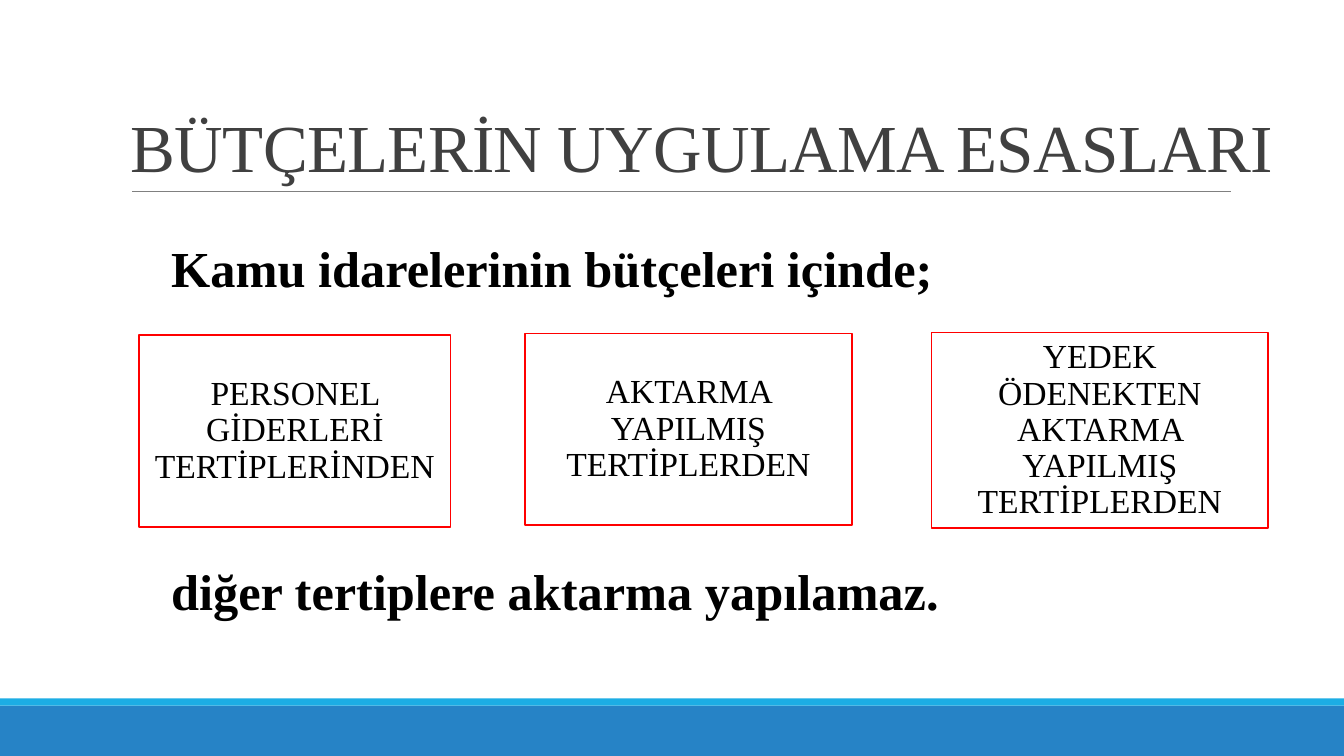
"""Builds the slide on the principles of applying public budgets."""
from dataclasses import dataclass

from lxml import etree
from pptx import Presentation
from pptx.dml.color import RGBColor
from pptx.enum.shapes import MSO_CONNECTOR, MSO_SHAPE
from pptx.enum.text import MSO_ANCHOR, PP_ALIGN
from pptx.oxml.ns import qn
from pptx.util import Inches, Pt

RECTANGLE = MSO_SHAPE.RECTANGLE
STRAIGHT = MSO_CONNECTOR.STRAIGHT
TOP, MIDDLE, BOTTOM = MSO_ANCHOR.TOP, MSO_ANCHOR.MIDDLE, MSO_ANCHOR.BOTTOM
LEFT, CENTER = PP_ALIGN.LEFT, PP_ALIGN.CENTER

COLUMNS, ROWS = 133.33, 75
CELL = Inches(0.1)
FONT = "Times New Roman"


@dataclass(frozen=True)
class Area:
    left: float
    top: float
    width: float
    height: float

    def place(self) -> tuple[int, ...]:
        return tuple(cells(n) for n in (self.left, self.top, self.width, self.height))


@dataclass(frozen=True)
class Wording:
    text: str
    size: float
    color: str = "000000"
    bold: bool = False
    align: PP_ALIGN = LEFT
    anchor: MSO_ANCHOR = TOP
    line_spacing: float = 1.0
    tracking: int = 0


@dataclass(frozen=True)
class Label:
    area: Area
    wording: Wording


@dataclass(frozen=True)
class Band:
    area: Area
    fill: str


@dataclass(frozen=True)
class Source:
    area: Area
    text: str


BANDS = (
    Band(Area(0, 70, COLUMNS, 5), "2683C6"),
    Band(Area(0, 69.3, COLUMNS, 0.7), "1CADE4"),
)
LABELS = (
    Label(Area(12, 3.1, 115.6, 15.9),
          Wording("BÜTÇELERİN UYGULAMA ESASLARI", 48, "404040", anchor=BOTTOM,
                  line_spacing=0.85, tracking=-50)),
    Label(Area(16, 23, 105.4, 7.1),
          Wording("Kamu idarelerinin bütçeleri içinde;", 36, bold=True)),
    Label(Area(16, 55.1, 105.4, 7.1),
          Wording("diğer tertiplere aktarma yapılamaz.", 36, bold=True)),
)
SOURCES = (
    Source(Area(13.8, 33.2, 30.9, 19.1), "PERSONEL GİDERLERİ TERTİPLERİNDEN"),
    Source(Area(52.1, 33.1, 32.4, 19), "AKTARMA YAPILMIŞ TERTİPLERDEN"),
    Source(Area(92.4, 33, 33.4, 19.4), "YEDEK ÖDENEKTEN AKTARMA YAPILMIŞ TERTİPLERDEN"),
)


def cells(count: float) -> int:
    return round(count * CELL)


def color(value: str) -> RGBColor:
    return RGBColor.from_string(value)


def write(frame, wording: Wording) -> None:
    frame.word_wrap = True
    frame.vertical_anchor = wording.anchor
    para = frame.paragraphs[0]
    para.alignment = wording.align
    para.line_spacing = wording.line_spacing
    span = para.add_run()
    span.text = wording.text
    span.font.name = FONT
    span.font.size = Pt(wording.size)
    span.font.bold = wording.bold
    span.font.color.rgb = color(wording.color)
    if wording.tracking:
        span._r.get_or_add_rPr().set("spc", str(wording.tracking))


def add_rectangle(page, area: Area, fill: str):
    box = page.shapes.add_shape(RECTANGLE, *area.place())
    box.shadow.inherit = False
    box.fill.solid()
    box.fill.fore_color.rgb = color(fill)
    box.line.fill.background()
    return box


def add_label(page, label: Label) -> None:
    box = page.shapes.add_textbox(*label.area.place())
    write(box.text_frame, label.wording)


def add_source(page, source: Source) -> None:
    box = add_rectangle(page, source.area, "FFFFFF")
    box.line.color.rgb = color("FF0000")
    box.line.width = Pt(1.25)
    frame = box.text_frame
    frame.margin_left = frame.margin_right = cells(1)
    frame.margin_top = frame.margin_bottom = cells(1)
    write(frame, Wording(source.text, 24, align=CENTER, anchor=MIDDLE, line_spacing=0.9))


def add_title_rule(page) -> None:
    rule = page.shapes.add_connector(
        STRAIGHT, cells(13.1), cells(19), cells(122.1), cells(19))
    rule.line.color.rgb = color("808080")
    rule.line.width = Pt(0.5)
    etree.SubElement(rule._element.spPr, qn("a:effectLst"))


def main() -> None:
    deck = Presentation()
    deck.slide_width, deck.slide_height = cells(COLUMNS), cells(ROWS)
    page = deck.slides.add_slide(deck.slide_layouts[6])
    for band in BANDS:
        add_rectangle(page, band.area, band.fill)
    add_title_rule(page)
    for source in SOURCES:
        add_source(page, source)
    for label in LABELS:
        add_label(page, label)
    deck.save("out.pptx")


if __name__ == "__main__":
    main()
